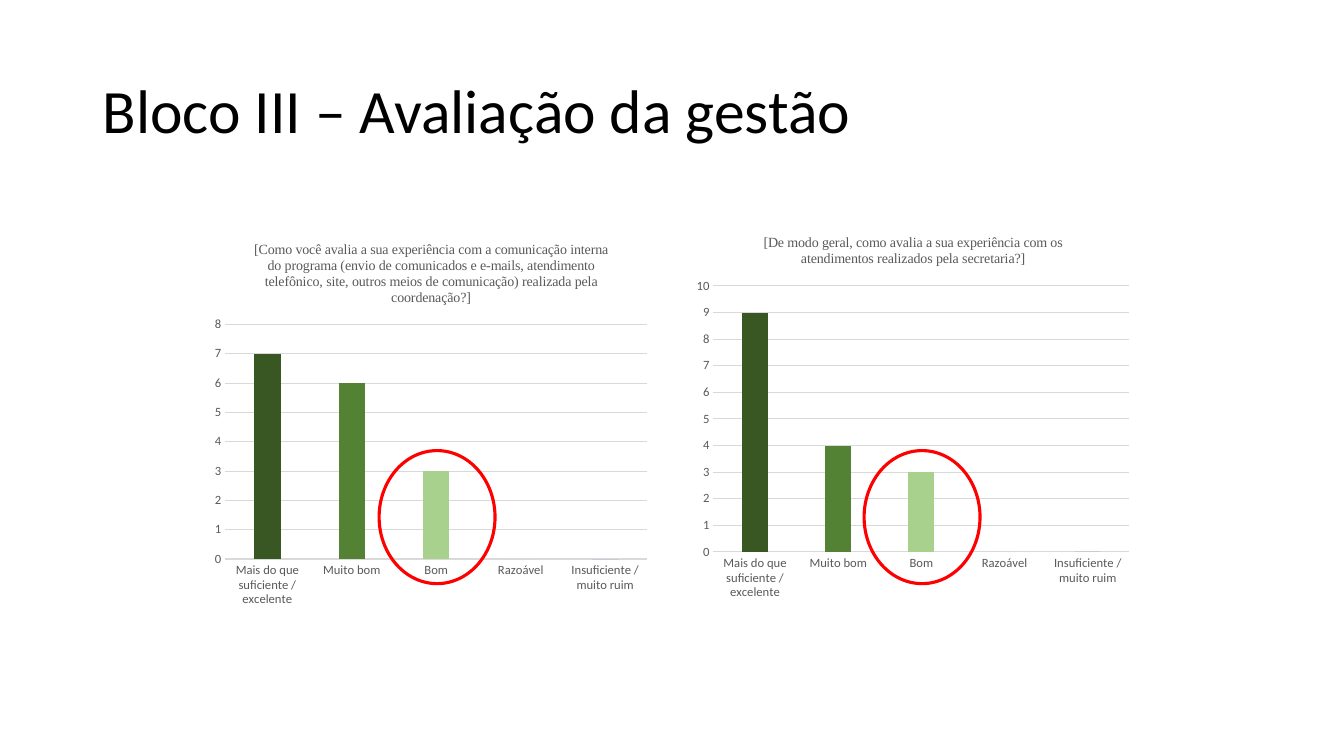
from pptx import Presentation
from pptx.chart.data import CategoryChartData
from pptx.dml.color import RGBColor
from pptx.enum.chart import XL_CHART_TYPE, XL_TICK_MARK
from pptx.enum.shapes import MSO_SHAPE
from pptx.enum.text import MSO_ANCHOR, PP_ALIGN
from pptx.util import Inches, Pt

COLUMN = XL_CHART_TYPE.COLUMN_CLUSTERED
NO_TICK = XL_TICK_MARK.NONE
OVAL = MSO_SHAPE.OVAL
MIDDLE = MSO_ANCHOR.MIDDLE
LEFT = PP_ALIGN.LEFT

RATINGS = ["Mais do que suficiente / excelente", "Muito bom", "Bom",
           "Razoável", "Insuficiente / muito ruim"]
BAR_COLORS = ["385723", "548235", "A9D18E", "C5E0B4"]
QUESTIONS = [
    (2.04, 2.23, 3.76, [7, 6, 3, 0, 0],
     "[Como você avalia a sua experiência com a comunicação interna do programa "
     "(envio de comunicados e e-mails, atendimento telefônico, site, outros meios "
     "de comunicação) realizada pela coordenação?]"),
    (6.82, 2.16, 8.57, [9, 4, 3, 0, 0],
     "[De modo geral, como avalia a sua experiência com os atendimentos "
     "realizados pela secretaria?]"),
]


def rgb(value):
    """Turn a hex string into a colour."""
    return RGBColor.from_string(value)


class SlideBuilder:
    """Hold the style and the current slide."""

    font = "Calibri"
    title_font = "Times New Roman"
    gray = "595959"
    grid = "D9D9D9"

    def __init__(self, prs):
        """Add a title-only slide."""
        self.s = prs.slides.add_slide(prs.slide_layouts[5])

    def style(self, font, size, color, name=None):
        """Format a font."""
        font.name = name or self.font
        font.size = Pt(size)
        font.color.rgb = rgb(color)
        font.bold = False

    def line(self, line, color, width):
        """Format a line."""
        line.color.rgb = rgb(color)
        line.width = Pt(width)

    def title(self, text, x, y, w, h):
        """Fill and place the title placeholder."""
        sp = self.s.shapes.title
        sp.left, sp.top, sp.width, sp.height = map(Inches, (x, y, w, h))
        tf = sp.text_frame
        tf.text = text
        tf.word_wrap = True
        tf.vertical_anchor = MIDDLE
        p = tf.paragraphs[0]
        p.alignment = LEFT
        p.line_spacing = 0.9
        self.style(p.runs[0].font, 44, "000000")

    def chart(self, question, values, x, y, w, h):
        """Add a column chart with one colour per rating."""
        data = CategoryChartData()
        data.categories = RATINGS
        data.add_series(question, values)
        frame = self.s.shapes.add_chart(COLUMN, *map(Inches, (x, y, w, h)), data)
        chart = frame.chart
        self.style(chart.font, 10, "000000")
        chart.has_legend = False
        chart.has_title = True
        tf = chart.chart_title.text_frame
        tf.text = question
        self.style(tf.paragraphs[0].runs[0].font, 10, self.gray, self.title_font)
        chart.chart_title.include_in_layout = False

        for axis in (chart.category_axis, chart.value_axis):
            axis.major_tick_mark = axis.minor_tick_mark = NO_TICK
            self.style(axis.tick_labels.font, 9, self.gray)
        self.line(chart.category_axis.format.line, self.grid, 0.75)
        chart.value_axis.format.line.fill.background()
        chart.value_axis.has_major_gridlines = True
        self.line(chart.value_axis.major_gridlines.format.line, self.grid, 0.75)

        plot = chart.plots[0]
        plot.gap_width = 219
        plot.overlap = -27
        plot.vary_by_categories = False
        series = plot.series[0]
        series.format.fill.solid()
        series.format.fill.fore_color.rgb = rgb("4472C4")
        for i, color in enumerate(BAR_COLORS):
            fill = series.points[i].format.fill
            fill.solid()
            fill.fore_color.rgb = rgb(color)

    def ring(self, x, y, w, h):
        """Add a red outline ellipse."""
        sp = self.s.shapes.add_shape(OVAL, *map(Inches, (x, y, w, h)))
        sp.shadow.inherit = False
        sp.fill.background()
        self.line(sp.line, "FF0000", 2.25)


def main():
    """Build and save the slide."""
    prs = Presentation()
    prs.slide_width, prs.slide_height = Inches(13.33), Inches(7.5)
    slide = SlideBuilder(prs)
    slide.title("Bloco III – Avaliação da gestão", 0.92, 0.4, 11.5, 1.45)
    for x, y, _, values, question in QUESTIONS:
        slide.chart(question, values, x, y, 4.47, 3.87)
    for _, _, ring_x, _, _ in QUESTIONS:
        slide.ring(ring_x, 4.47, 1.15, 1.32)
    prs.save("out.pptx")


if __name__ == "__main__":
    main()
